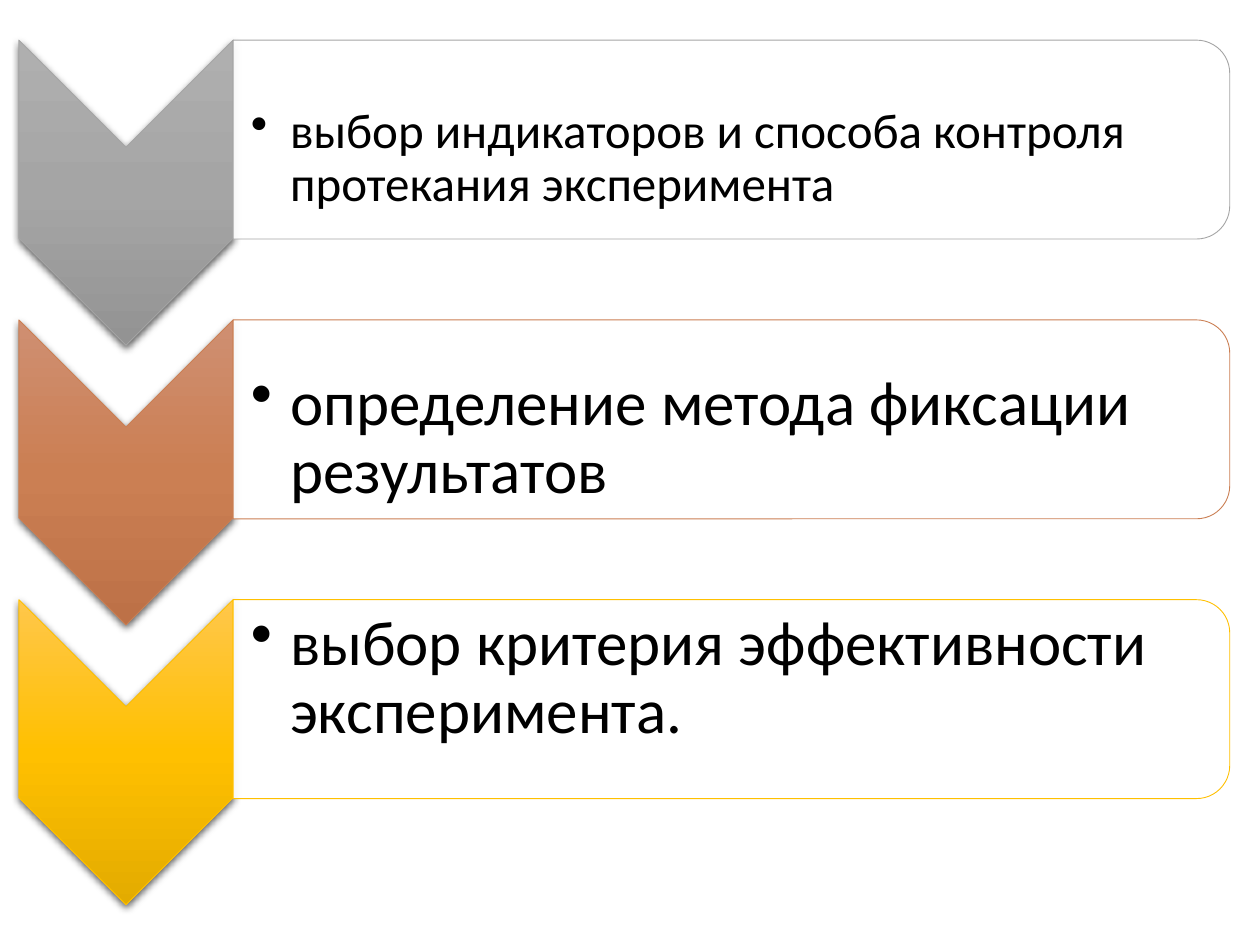
"""Build a slide with three chevron steps for planning an experiment."""
from lxml import etree
from pptx import Presentation
from pptx import util as u
from pptx.dml.color import RGBColor
from pptx.enum import shapes, text
from pptx.oxml import parse_xml
from pptx.oxml.ns import qn

NS = 'xmlns:a="http://schemas.openxmlformats.org/drawingml/2006/main"'
BLACK = RGBColor(0, 0, 0)
WHITE = RGBColor(255, 255, 255)
GRAY = [RGBColor.from_string(c) for c in ("AFAFAF", "A5A5A5", "939393")]
ORANGE = [RGBColor.from_string(c) for c in ("CF8F72", "CB7F53", "BD7147")]
YELLOW = [RGBColor.from_string(c) for c in ("FFC74B", "FFC000", "E3AB00")]

STEPS = [
    ("выбор индикаторов и способа контроля протекания эксперимента", 28, GRAY, 0.8, 0),
    ("определение метода фиксации результатов", 36, ORANGE, 0.8, 0),
    ("выбор критерия эффективности эксперимента.", 36, YELLOW, 0, 0.8),
]
LEFT, TOP, PITCH = 0.38, 0.81, 5.64
CHEVRON_W, CHEVRON_H = 4.32, 6.15
PANEL_W, PANEL_H = 20.09, 4.01
TEXT_W, TEXT_H = 19.91, 3.61


def add_turned(s, kind, left, top, width, height, line):
    """Add a shape turned by 90 degrees that covers the given box."""
    x, y = left + (width - height) / 2, top + (height - width) / 2
    sp = s.shapes.add_shape(kind, u.Cm(x), u.Cm(y), u.Cm(height), u.Cm(width))
    sp.rotation = 90
    sp.shadow.inherit = False
    sp.line.color.rgb = line
    sp.line.width = u.Pt(0.5)
    return sp


def add_chevron(s, top, colors):
    """Add a downward chevron with a gradient and a soft shadow."""
    sp = add_turned(s, shapes.MSO_SHAPE.CHEVRON, LEFT, top, CHEVRON_W, CHEVRON_H, colors[1])
    stops = "".join(f'<a:gs pos="{i * 50000}"><a:srgbClr val="{c}"/></a:gs>'
                    for i, c in enumerate(colors))
    sp._element.spPr.find(qn("a:prstGeom")).addnext(parse_xml(
        f'<a:gradFill {NS} rotWithShape="0"><a:gsLst>{stops}</a:gsLst>'
        '<a:lin ang="5400000" scaled="0"/></a:gradFill>'))
    sp._element.spPr.find(qn("a:effectLst")).append(parse_xml(
        f'<a:outerShdw {NS} blurRad="57150" dist="19050" dir="5400000" algn="ctr" '
        'rotWithShape="0"><a:srgbClr val="000000"><a:alpha val="63000"/></a:srgbClr>'
        '</a:outerShdw>'))


def add_panel(s, top, color):
    """Add a translucent panel rounded on its right side."""
    sp = add_turned(s, shapes.MSO_SHAPE.ROUND_2_SAME_RECTANGLE, LEFT + CHEVRON_W, top,
                    PANEL_W, PANEL_H, color)
    sp.fill.solid()
    sp.fill.fore_color.rgb = WHITE
    clr = sp._element.spPr.find(qn("a:solidFill"))[0]
    etree.SubElement(clr, qn("a:alpha")).set("val", "90000")


def add_label(s, top, words, size, pad_top, pad_bottom):
    """Add the bulleted text of a step."""
    sp = s.shapes.add_textbox(u.Cm(LEFT + CHEVRON_W), u.Cm(top + (PANEL_H - TEXT_H) / 2),
                              u.Cm(TEXT_W), u.Cm(TEXT_H))
    tf = sp.text_frame
    tf.word_wrap = True
    tf.vertical_anchor = text.MSO_ANCHOR.MIDDLE
    tf.margin_left, tf.margin_right = u.Cm(0.36), u.Cm(0.03)
    tf.margin_top, tf.margin_bottom = u.Cm(pad_top), u.Cm(pad_bottom)
    p = tf.paragraphs[0]
    p.text = words
    p.line_spacing = 0.9
    p.font.name, p.font.size, p.font.color.rgb = "Calibri", u.Pt(size), BLACK
    pPr = p._p.get_or_add_pPr()
    pPr.set("marL", str(u.Cm(0.79)))
    pPr.set("indent", str(-u.Cm(0.79)))
    pPr.find(qn("a:lnSpc")).addnext(parse_xml(f'<a:buChar {NS} char="•"/>'))


def main():
    prs = Presentation()
    prs.slide_width, prs.slide_height = u.Cm(25.4), u.Cm(19.05)
    s = prs.slides.add_slide(prs.slide_layouts[6])
    for i, (words, size, colors, pad_top, pad_bottom) in enumerate(STEPS):
        top = TOP + i * PITCH
        add_chevron(s, top, colors)
        add_panel(s, top, colors[1])
        add_label(s, top, words, size, pad_top, pad_bottom)
    prs.save("out.pptx")


if __name__ == "__main__":
    main()
